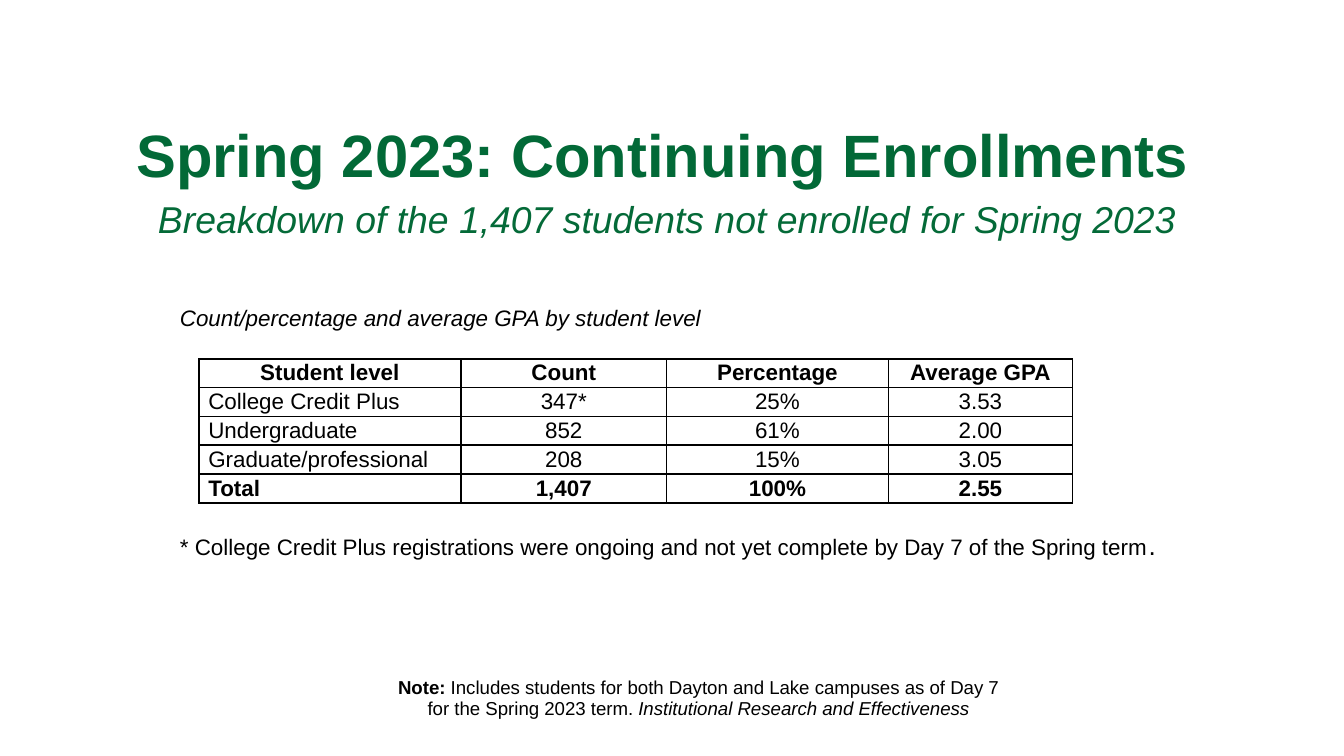
from lxml.etree import SubElement
from pptx import Presentation
from pptx.dml.color import RGBColor
from pptx.enum.text import MSO_ANCHOR, PP_ALIGN
from pptx.oxml.ns import qn
from pptx.util import Inches, Pt

WIDTH = 10
HEIGHT = WIDTH * 9 / 16
BLACK = "000000"
TABLE_LEFT = 1.48
LEVELS_HEIGHT = 1.07
LEFT, CENTER = PP_ALIGN.LEFT, PP_ALIGN.CENTER

TEXTS = [
    {"at": (0.29, 0.83, 9.41, 0.64), "align": CENTER, "color": "026937",
     "spans": [("Spring 2023: Continuing Enrollments ", {"size": Pt(32), "bold": True})]},
    {"at": (0.91, 1.39, 8.19, 0.43), "align": CENTER, "color": "046A38", "spacing": 1.07,
     "spans": [("Breakdown of the 1,407 students not enrolled for Spring 2023 ",
                {"size": Pt(20), "italic": True})]},
    {"at": (1.24, 2.11, 7.51, 0.5), "anchor": MSO_ANCHOR.MIDDLE,
     "spans": [("Count/percentage and average GPA by student level",
                {"size": Pt(12), "italic": True})]},
    {"at": (1.24, 3.89, 7.51, 0.34),
     "spans": [("* College Credit Plus registrations were ongoing and not yet complete "
                "by Day 7 of the Spring term", {"size": Pt(12)}),
               (".", {"size": Pt(14)})]},
]

LEVEL_COLUMNS = [1.95, 1.53, 1.65, 1.37]
LEVELS = [
    ("Student level", "Count", "Percentage", "Average GPA"),
    ("College Credit Plus", "347*", "25%", "3.53"),
    ("Undergraduate", "852", "61%", "2.00"),
    ("Graduate/professional", "208", "15%", "3.05"),
    ("Total", "1,407", "100%", "2.55"),
]

NOTE = [
    [("Note: ", {"bold": True}),
     ("Includes students for both Dayton and Lake campuses as of Day 7 ", {})],
    [("for the Spring 2023 term. ", {}),
     ("Institutional Research and Effectiveness ", {"italic": True})],
]


def rgb(value):
    return RGBColor.from_string(value)


def write(para, spans, align=LEFT, color=BLACK, spacing=1.0):
    para.alignment = align
    para.line_spacing = spacing
    for text, style in spans:
        span = para.add_run()
        span.text = text
        span.font.color.rgb = rgb(color)
        for name, value in {"name": "Arial", "bold": False, **style}.items():
            setattr(span.font, name, value)


def add_text(page, at, spans, anchor=MSO_ANCHOR.TOP, **style):
    frame = page.shapes.add_textbox(*map(Inches, at)).text_frame
    frame.word_wrap = True
    frame.vertical_anchor = anchor
    write(frame.paragraphs[0], spans, **style)


def add_grid(page, top, columns, row_count, height):
    frame = page.shapes.add_table(row_count, len(columns), Inches(TABLE_LEFT), Inches(top),
                                  Inches(sum(columns)), Inches(height))
    table = frame.table
    table.first_row = table.horz_banding = False
    for column, width in zip(table.columns, columns):
        column.width = Inches(width)
    return table


def format_cell(cell, margins, border=None):
    for side, margin in zip(("left", "top", "right", "bottom"), margins):
        setattr(cell, f"margin_{side}", Inches(margin))
    if border:
        properties = cell._tc.get_or_add_tcPr()
        for side in ("lnL", "lnR", "lnT", "lnB"):
            line = SubElement(properties, qn(f"a:{side}"), w=str(Pt(1)))
            fill = SubElement(line, qn("a:solidFill"))
            SubElement(fill, qn("a:srgbClr"), val=border)
    cell.fill.background()


def add_levels(page):
    table = add_grid(page, 2.67, LEVEL_COLUMNS, len(LEVELS), LEVELS_HEIGHT)
    for row, values in enumerate(LEVELS):
        for column, value in enumerate(values):
            cell = table.cell(row, column)
            format_cell(cell, (0.07, 0, 0.07, 0), BLACK)
            style = {"size": Pt(12), "bold": row in (0, len(LEVELS) - 1)}
            align = CENTER if row == 0 or column else LEFT
            write(cell.text_frame.paragraphs[0], [(value, style)], align, spacing=1.07)


def add_note(page):
    cell = add_grid(page, 5.01, [7.47], 1, 0.34).cell(0, 0)
    format_cell(cell, (0.01, 0.01, 0.01, 0.01))
    cell.vertical_anchor = MSO_ANCHOR.BOTTOM
    frame = cell.text_frame
    for index, spans in enumerate(NOTE):
        para = frame.add_paragraph() if index else frame.paragraphs[0]
        write(para, [(text, {"size": Pt(10), **style}) for text, style in spans], CENTER)


def main():
    deck = Presentation()
    deck.slide_width, deck.slide_height = Inches(WIDTH), Inches(HEIGHT)
    page = deck.slides.add_slide(deck.slide_layouts[6])
    for text in TEXTS:
        add_text(page, **text)
    add_levels(page)
    add_note(page)
    deck.save("out.pptx")


if __name__ == "__main__":
    main()
